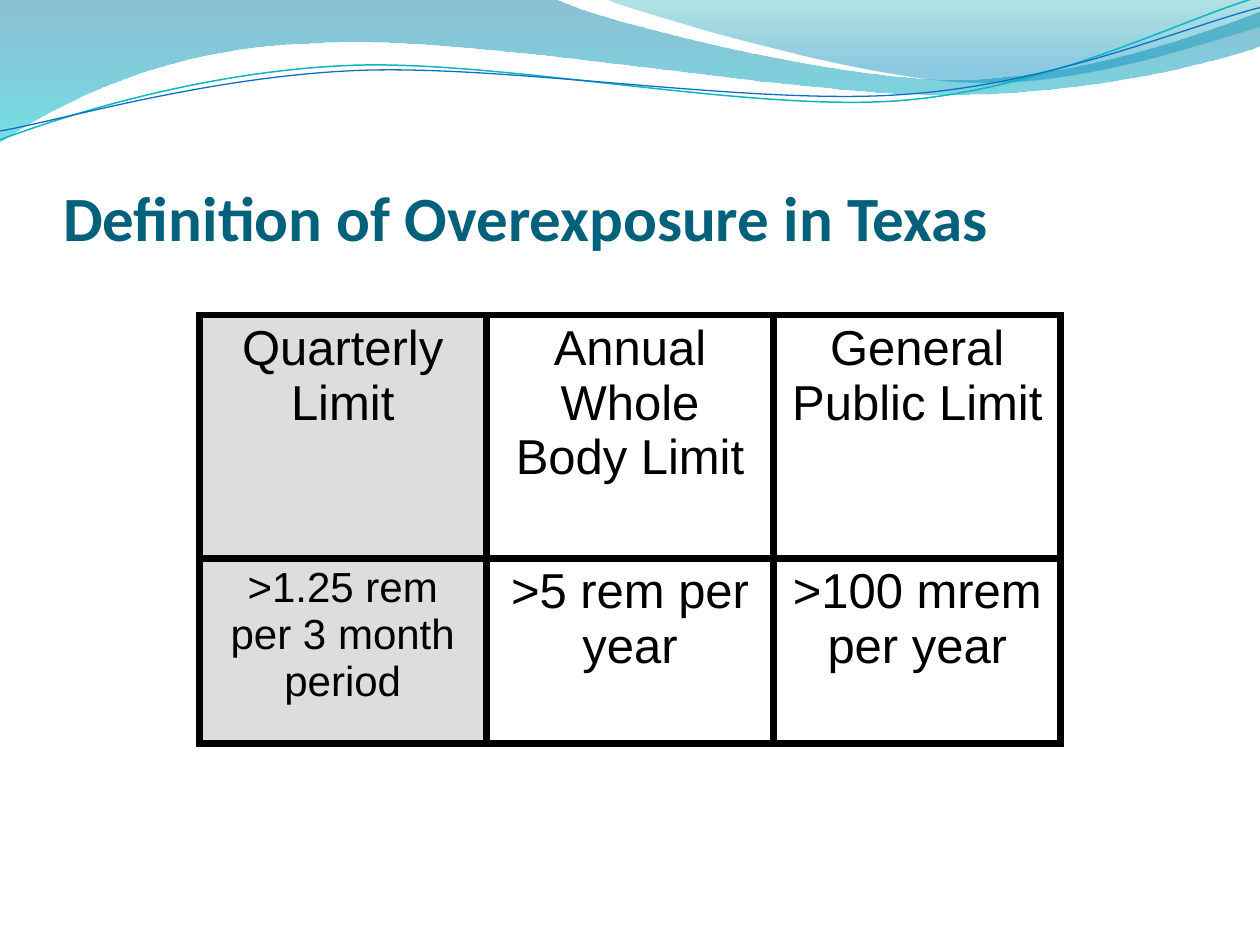
"""Build a slide that defines overexposure limits in a bordered table under a wave banner."""
from lxml import etree
from pptx import Presentation
from pptx import util as u
from pptx.dml.color import RGBColor
from pptx.enum import text
from pptx.oxml import parse_xml
from pptx.oxml.ns import nsdecls, qn

TITLE_BLUE = RGBColor(0x04, 0x61, 0x7B)
BLACK = RGBColor(0, 0, 0)
GREY = RGBColor(0xDD, 0xDD, 0xDD)
TEAL_LINE = RGBColor(0x0A, 0xB8, 0xBF)
BLUE_LINE = RGBColor(0x0F, 0x6F, 0xC6)
DEEP_BLUE = RGBColor(0x00, 0x74, 0xA1)
CYAN = RGBColor(0x00, 0xC6, 0xCF)
SEA_GREEN = RGBColor(0x00, 0xA1, 0xA9)
SKY_BLUE = RGBColor(0x00, 0x8B, 0xBF)

TITLE = "Definition of Overexposure in Texas"
LIMITS = [
    [("Quarterly Limit", 28), ("Annual Whole Body Limit", 28), ("General Public Limit", 28)],
    [(">1.25 rem per 3 month period", 24), (">5 rem per year", 28), (">100 mrem per year", 28)],
]
COLUMN_WIDTH = 2.28
ROW_HEIGHTS = [1.93, 1.47]
BORDER_PT = 4.5

BANDS = [
    ([(0, 0), (4.4, -0.01),
      (4.76, 0.17, 6.64, 0.63, 7.58, 0.63), (8.53, 0.63, 9.58, 0.26, 10, 0.09),
      (10.01, 0.36),
      (9.83, 0.44, 8.7, 0.76, 7.46, 0.75), (6.22, 0.75, 3.82, 0.28, 2.57, 0.34),
      (1.29, 0.36, 0.46, 0.83, -0.01, 1.13), (0, 0)],
     [(0, DEEP_BLUE, 45), (1, CYAN, 55)]),
    ([(4.79, -0.01),
      (5.09, 0.11, 6.82, 0.62, 7.69, 0.65), (8.56, 0.69, 9.61, 0.32, 10, 0.21),
      (10, 0), (4.79, -0.01)],
     [(0, SEA_GREEN, 30), (0.8, SKY_BLUE, 45)]),
]
RIPPLES = [
    ([(0, 1.11), (0.48, 0.93, 1.58, 0.57, 2.77, 0.52),
      (3.95, 0.47, 5.93, 0.89, 7.13, 0.8), (8.33, 0.71, 9.38, 0.15, 9.98, -0.02)],
     TEAL_LINE, 0.85),
    ([(0, 1.04), (0.47, 0.96, 1.64, 0.61, 2.83, 0.56),
      (4.03, 0.51, 5.97, 0.84, 7.17, 0.75), (8.36, 0.67, 9.41, 0.21, 10, 0.06)],
     BLUE_LINE, 0.75),
]


def add_wave(slide, steps, close):
    ends = [(u.Inches(step[-2]), u.Inches(step[-1])) for step in steps]
    builder = slide.shapes.build_freeform(*ends[0], scale=1.0)
    builder.add_line_segments(ends[1:], close=close)
    wave = builder.convert_to_shape()
    wave.shadow.inherit = False
    for segment, step in zip(list(wave._element.iter(qn("a:lnTo"))), steps[1:]):
        if len(step) == 6:
            segment.tag = qn("a:cubicBezTo")
            for i in (2, 0):
                handle = etree.Element(qn("a:pt"))
                handle.set("x", str(u.Inches(step[i]) - wave.left))
                handle.set("y", str(u.Inches(step[i + 1]) - wave.top))
                segment.insert(0, handle)
    return wave


def add_band(slide, steps, stops):
    band = add_wave(slide, steps, True)
    band.line.fill.background()
    band.fill.gradient()
    band.fill.gradient_angle = 270
    for stop, (position, colour, _) in zip(band.fill.gradient_stops, stops):
        stop.position = position
        stop.color.rgb = colour
    for colour, (_, _, opacity) in zip(band._element.iter(qn("a:srgbClr")), stops):
        etree.SubElement(colour, qn("a:alpha")).set("val", str(opacity * 1000))


def add_ripple(slide, steps, colour, width):
    ripple = add_wave(slide, steps, False)
    ripple.fill.background()
    ripple.line.color.rgb = colour
    ripple.line.width = u.Pt(width)


def set_borders(cell):
    properties = cell._tc.get_or_add_tcPr()
    for i, side in enumerate(("lnL", "lnR", "lnT", "lnB")):
        properties.insert(i, parse_xml(
            f'<a:{side} {nsdecls("a")} w="{u.Pt(BORDER_PT)}"><a:solidFill>'
            f'<a:srgbClr val="{BLACK}"/></a:solidFill></a:{side}>'))


def add_limits(slide):
    columns = len(LIMITS[0])
    limits = slide.shapes.add_table(
        len(LIMITS), columns, u.Inches(1.58), u.Inches(2.5),
        u.Inches(COLUMN_WIDTH * columns), u.Inches(sum(ROW_HEIGHTS))).table
    for column in limits.columns:
        column.width = u.Inches(COLUMN_WIDTH)
    for r, (row, height) in enumerate(zip(LIMITS, ROW_HEIGHTS)):
        limits.rows[r].height = u.Inches(height)
        for c, (wording, size) in enumerate(row):
            cell = limits.cell(r, c)
            cell.text = wording
            if c == 0:
                cell.fill.solid()
                cell.fill.fore_color.rgb = GREY
            else:
                cell.fill.background()
            set_borders(cell)
            paragraph = cell.text_frame.paragraphs[0]
            paragraph.alignment = text.PP_ALIGN.CENTER
            font = paragraph.font
            font.name, font.size, font.bold = "Arial", u.Pt(size), False
            font.color.rgb = BLACK


def set_title(slide):
    title = slide.shapes.title
    title.left, title.top = u.Inches(0.5), u.Inches(0.77)
    title.width, title.height = u.Inches(9.08), u.Inches(1.25)
    frame = title.text_frame
    frame.text = TITLE
    frame.auto_size = text.MSO_AUTO_SIZE.NONE
    frame.vertical_anchor = text.MSO_ANCHOR.BOTTOM
    frame.margin_left = frame.margin_right = frame.margin_bottom = 0
    frame.margin_top = u.Inches(0.05)
    paragraph = frame.paragraphs[0]
    paragraph.alignment = text.PP_ALIGN.LEFT
    font = paragraph.font
    font.name, font.size, font.bold = "Calibri", u.Pt(36), True
    font.color.rgb = TITLE_BLUE
    slide.shapes._spTree.append(title._element)


def main():
    deck = Presentation()
    deck.slide_width, deck.slide_height = u.Inches(10), u.Inches(7.5)
    slide = deck.slides.add_slide(deck.slide_layouts[5])
    for band in BANDS:
        add_band(slide, *band)
    for ripple in RIPPLES:
        add_ripple(slide, *ripple)
    add_limits(slide)
    set_title(slide)
    deck.save("out.pptx")


if __name__ == "__main__":
    main()
